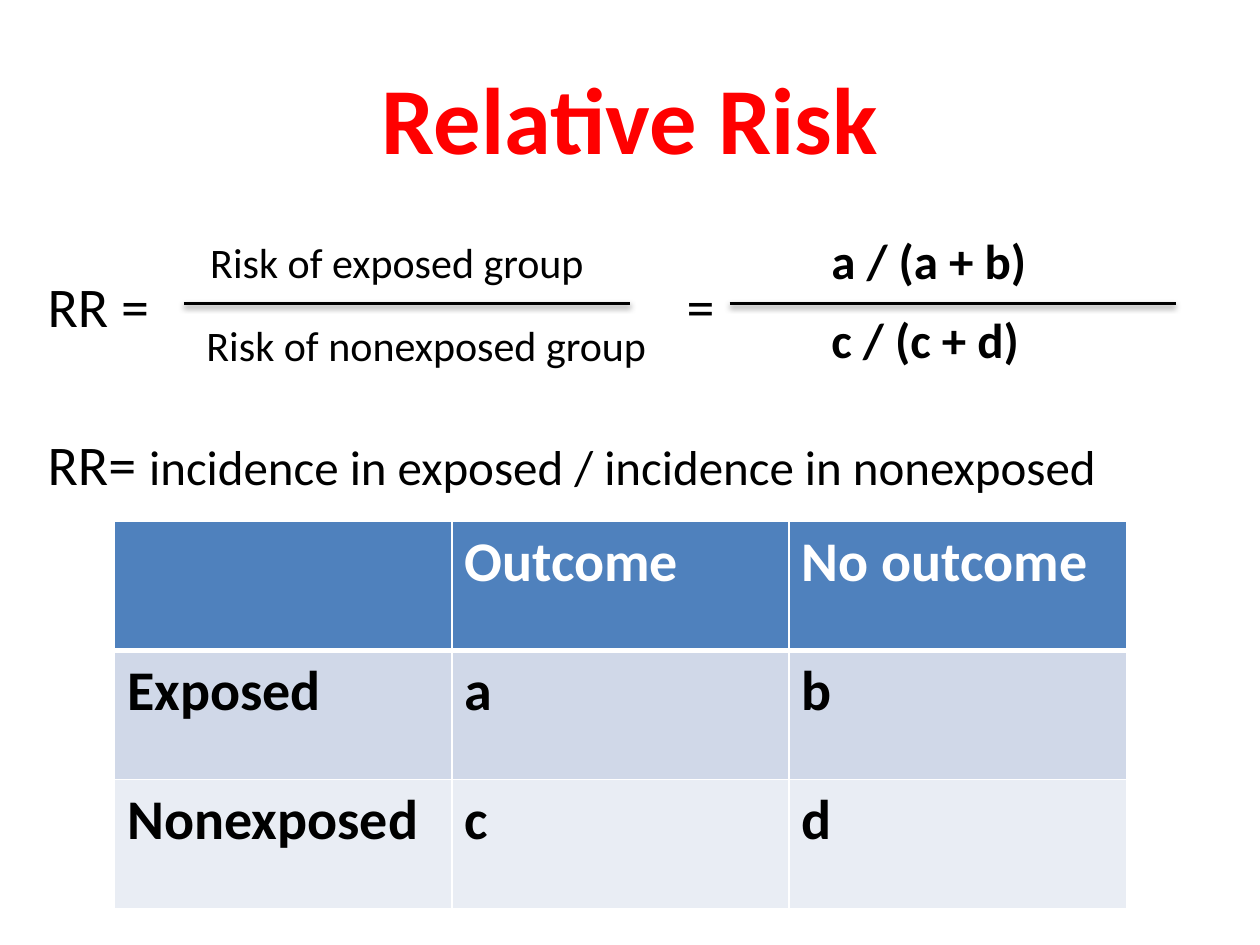
"""Build a slide that defines relative risk with formulas and a two-by-two table."""
from lxml import etree
from pptx import Presentation
from pptx import util as u
from pptx.dml.color import RGBColor
from pptx.enum import shapes, text
from pptx.oxml.ns import qn

HUES = {"title": "FF0000", "ink": "000000", "white": "FFFFFF",
        "head": "4F81BD", "odd": "D0D8E8", "even": "E9EDF4"}
FONT = "Calibri"
ROWS = [("", "Outcome", "No outcome"),
        ("Exposed", "a", "b"),
        ("Nonexposed", "c", "d")]


def hue(name):
    return RGBColor.from_string(HUES[name])


def node(top, tag, **attrs):
    return etree.SubElement(top, qn(tag), attrs)


def write(para, words, size=32, color="ink", bold=False):
    run = para.add_run()
    run.text = words
    font = run.font
    font.name, font.size, font.bold = FONT, u.Pt(size), bold
    font.color.rgb = hue(color)


def add_box(slide, spot, runs, wrap=False, center=False, **style):
    box = slide.shapes.add_textbox(*map(u.Inches, spot))
    frame = box.text_frame
    frame.word_wrap = wrap
    para = frame.paragraphs[0]
    if center:
        frame.vertical_anchor = text.MSO_ANCHOR.MIDDLE
        para.alignment = text.PP_ALIGN.CENTER
    for words, size in runs:
        write(para, words, size, **style)


def add_bar(slide, left, top, width):
    bar = slide.shapes.add_connector(
        shapes.MSO_CONNECTOR.STRAIGHT, u.Inches(left), u.Inches(top),
        u.Inches(left + width), u.Inches(top))
    bar.line.color.rgb = hue("ink")
    bar.line.width = u.Pt(2)
    effects = node(bar._element.spPr, "a:effectLst")
    shade = node(effects, "a:outerShdw", blurRad="40000", dist="20000",
                 dir="5400000", rotWithShape="0")
    tint = node(shade, "a:srgbClr", val=HUES["ink"])
    node(tint, "a:alpha", val="38000")


def edge(cell, base):
    props = cell._tc.get_or_add_tcPr()
    for spot, side in enumerate("LRTB"):
        width = base if side == "B" else 1
        line = node(props, f"a:ln{side}", w=str(u.Pt(width)))
        fill = node(line, "a:solidFill")
        node(fill, "a:srgbClr", val=HUES["white"])
        props.insert(spot, line)


def add_grid(slide, spot):
    table = slide.shapes.add_table(
        len(ROWS), len(ROWS[0]), *map(u.Inches, spot)).table
    fills = ("head", "odd", "even")
    for row, (labels, shade) in enumerate(zip(ROWS, fills)):
        first = row == 0
        for col, label in enumerate(labels):
            cell = table.cell(row, col)
            cell.fill.solid()
            cell.fill.fore_color.rgb = hue(shade)
            edge(cell, 3 if first else 1)
            if label:
                write(cell.text_frame.paragraphs[0], label, bold=True,
                      color="white" if first else "ink")


def main():
    deck = Presentation()
    deck.slide_width, deck.slide_height = u.Inches(10), u.Inches(7.5)
    slide = deck.slides.add_slide(deck.slide_layouts[6])

    add_box(slide, (0.5, 0.3, 9, 1.25), [("Relative Risk", 54)],
            wrap=True, center=True, color="title", bold=True)
    add_box(slide, (0.28, 2.11, 1.1, 0.63), [("RR =", 32)])
    add_box(slide, (5.35, 2.11, 0.45, 0.63), [("=", 32)])
    add_box(slide, (0.28, 3.36, 9.53, 0.63),
            [("RR= ", 32),
             ("incidence in exposed / incidence in nonexposed", 28)], wrap=True)

    for left in (1.46, 5.79):
        add_bar(slide, left, 2.41, 3.54)
    add_box(slide, (1.57, 1.83, 3.19, 0.5), [("Risk of exposed group", 24)])
    add_box(slide, (1.54, 2.49, 3.72, 0.5), [("Risk of nonexposed group", 24)])
    add_box(slide, (6.5, 1.78, 1.77, 0.57), [("a / (a + b)", 28)], bold=True)
    add_box(slide, (6.5, 2.41, 1.71, 0.57), [("c / (c + d)", 28)], bold=True)

    add_grid(slide, (0.91, 4.14, 8.03, 3.07))
    deck.save("out.pptx")


if __name__ == "__main__":
    main()
